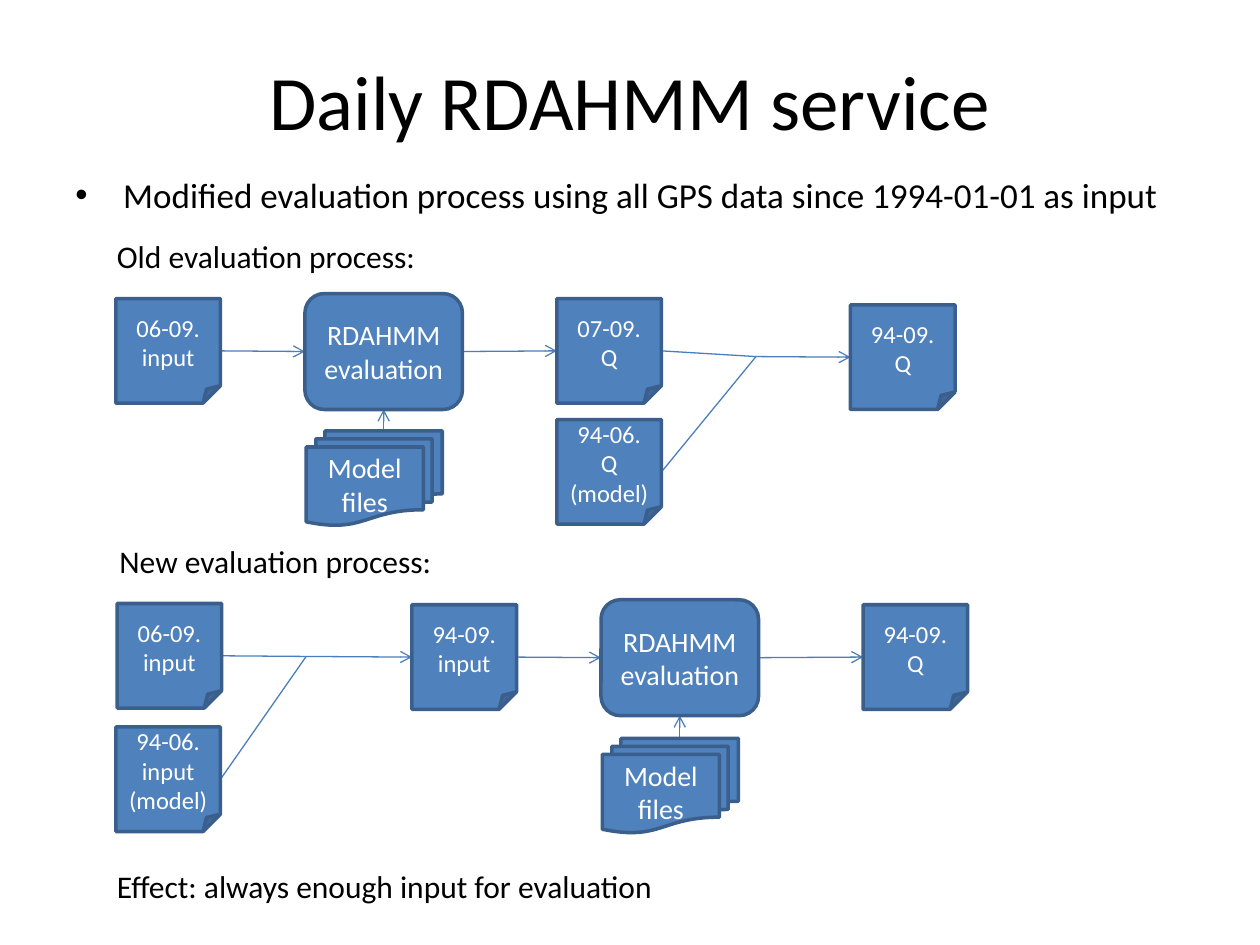
from lxml.etree import SubElement
from pptx import Presentation
from pptx.dml.color import RGBColor
from pptx.enum.shapes import MSO_CONNECTOR as Conn, MSO_SHAPE as Kind
from pptx.enum.text import MSO_ANCHOR as Anchor, PP_ALIGN as Align
from pptx.oxml.ns import qn
from pptx.util import Inches, Pt

BLACK = RGBColor(0, 0, 0)
WHITE = RGBColor(255, 255, 255)
BLUE = RGBColor(0x4F, 0x81, 0xBD)
EDGE = RGBColor(0x3A, 0x5F, 0x8C)
WIRE = RGBColor(0x4B, 0x7E, 0xBC)

# Content
TITLE = "Daily RDAHMM service"
POINT = "Modified evaluation process using all GPS data since 1994-01-01 as input"
LABELS = [
    ("Old evaluation process:", 0.83, 1.83, 3, 0.4),
    ("New evaluation process:", 0.85, 4.25, 3, 0.4),
    ("Effect: always enough input for evaluation", 0.83, 6.83, 7.92, 0.42),
]

# Kind: preset shape, width, height, text size
KINDS = {
    "file": (Kind.FOLDED_CORNER, 0.83, 0.83, 14),
    "step": (Kind.ROUNDED_RECTANGLE, 1.25, 0.92, 16),
    "model": (Kind.FLOWCHART_MULTIDOCUMENT, 1.08, 0.75, 16),
}

# Name: kind, left, top, lines of text
NODES = {
    "old input": ("file", 0.92, 2.37, ["06-09.", "input"]),
    "old step": ("step", 2.42, 2.33, ["RDAHMM evaluation"]),
    "old result": ("file", 4.42, 2.37, ["07-09.", "Q"]),
    "old past": ("file", 4.42, 3.33, ["94-06.", "Q", "(model)"]),
    "old total": ("file", 6.75, 2.42, ["94-09.", "Q"]),
    "old model": ("model", 2.43, 3.42, ["Model files"]),
    "new input": ("file", 0.93, 4.79, ["06-09.", "input"]),
    "new past": ("file", 0.92, 5.77, ["94-06.", "input", "(model)"]),
    "new merged": ("file", 3.27, 4.8, ["94-09.", "input"]),
    "new step": ("step", 4.77, 4.76, ["RDAHMM evaluation"]),
    "new total": ("file", 6.85, 4.8, ["94-09.", "Q"]),
    "new model": ("model", 4.78, 5.86, ["Model files"]),
}

# Arrows run from right side to left side
FLOWS = [
    ("old input", "old step"),
    ("old step", "old result"),
    ("new merged", "new step"),
    ("new step", "new total"),
]

# Two files meet at a point, then go on to a third
JOINS = [
    ("old result", "old past", (6, 2.83), "old total"),
    ("new input", "new past", (2.43, 5.21), "new merged"),
]

FEEDS = [("old model", "old step"), ("new model", "new step")]


def write(frame, lines, size, color, align=Align.LEFT):
    frame.word_wrap = True
    frame.text = "\n".join(lines)
    look = {"name": "Calibri", "size": Pt(size)}
    for par in frame.paragraphs:
        par.alignment = align
        for font in [run.font for run in par.runs]:
            for key, value in look.items():
                setattr(font, key, value)
            font.color.rgb = color


def label(text, *area, size=18):
    box = slide.shapes.add_textbox(*map(Inches, area))
    write(box.text_frame, [text], size, BLACK)
    return box.text_frame.paragraphs[0]


def node(kind, left, top, lines):
    preset, width, height, size = KINDS[kind]
    shape = slide.shapes.add_shape(
        preset, *map(Inches, (left, top, width, height)))
    shape.shadow.inherit = False
    shape.fill.solid()
    shape.fill.fore_color.rgb = BLUE
    shape.line.color.rgb = EDGE
    shape.line.width = Pt(2)
    shape.text_frame.vertical_anchor = Anchor.MIDDLE
    write(shape.text_frame, lines, size, WHITE, Align.CENTER)


def side(name, across, down):
    """Point of a node, as shares of its width and height."""
    kind, left, top, _ = NODES[name]
    _, width, height, _ = KINDS[kind]
    return left + across * width, top + down * height


def wire(start, end, arrow=True):
    line = slide.shapes.add_connector(
        Conn.STRAIGHT, *map(Inches, (*start, *end)))
    line.line.color.rgb = WIRE
    line.line.width = Pt(0.75)
    if arrow:
        SubElement(line.line._get_or_add_ln(), qn("a:tailEnd"), type="arrow")
    SubElement(line._element.spPr, qn("a:effectLst"))


prs = Presentation()
prs.slide_width, prs.slide_height = Inches(10), Inches(7.5)
slide = prs.slides.add_slide(prs.slide_layouts[5])

# Title
title = slide.shapes.title
place = dict(left=0.5, top=0.17, width=9, height=1.25)
for key, value in place.items():
    setattr(title, key, Inches(value))
title.text_frame.vertical_anchor = Anchor.MIDDLE
write(title.text_frame, [TITLE], 44, BLACK, Align.CENTER)

# Bullet point
point = label(POINT, 0.5, 1.33, 9, 0.5, size=20)
point.space_before = Pt(4)
props = point._p.get_or_add_pPr()
props.set("marL", str(Inches(0.38)))
props.set("indent", str(Inches(-0.38)))
SubElement(props, qn("a:buFont"), typeface="Arial")
SubElement(props, qn("a:buChar"), char="•")

# Labels
for item in LABELS:
    label(*item)

# Lines and arrows
for start, end in FLOWS:
    wire(side(start, 1, 0.5), side(end, 0, 0.5))
for first, second, meet, end in JOINS:
    for start in (first, second):
        wire(side(start, 1, 0.5), meet, arrow=False)
    wire(meet, side(end, 0, 0.5))
for start, end in FEEDS:
    wire(side(start, 0.57, 0), side(end, 0.5, 1))

# Files, steps and models
for item in NODES.values():
    node(*item)

prs.save("out.pptx")
